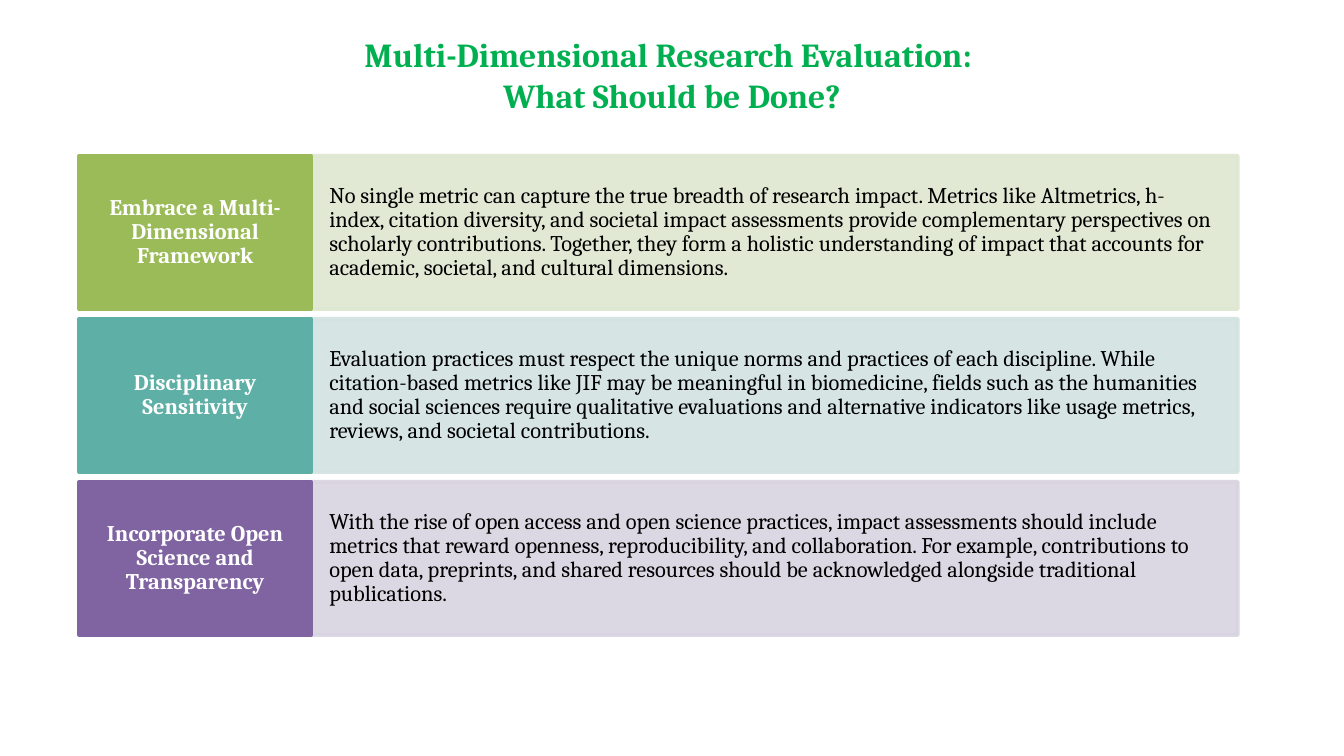
import pptx
import pptx.util
import pptx.dml.color
import pptx.enum.shapes
import pptx.enum.text
import pptx.oxml
import pptx.oxml.ns

EMU_PER_PX = 2286
FONT = "Cambria"
COLORS = {
    "title": "00B050",
    "label": "FFFFFF",
    "body": "000000",
    "green": "9BBB59",
    "green_tint": "DEE7D1",
    "teal": "5EAFA6",
    "teal_tint": "D2E3E2",
    "purple": "8064A2",
    "purple_tint": "D8D3E0",
}
LEFT, TOP = 236, 464
LABEL_WIDTH, BODY_WIDTH = 690, 2758
ROW_HEIGHT, ROW_STEP = 456, 485

ROWS = [
    ("green", "Embrace a Multi-Dimensional Framework",
     "No single metric can capture the true breadth of research impact. "
     "Metrics like Altmetrics, h-index, citation diversity, and societal impact "
     "assessments provide complementary perspectives on scholarly contributions. "
     "Together, they form a holistic understanding of impact that accounts for "
     "academic, societal, and cultural dimensions."),
    ("teal", "Disciplinary Sensitivity",
     "Evaluation practices must respect the unique norms and practices of each "
     "discipline. While citation-based metrics like JIF may be meaningful in "
     "biomedicine, fields such as the humanities and social sciences require "
     "qualitative evaluations and alternative indicators like usage metrics, "
     "reviews, and societal contributions."),
    ("purple", "Incorporate Open Science and Transparency",
     "With the rise of open access and open science practices, impact assessments "
     "should include metrics that reward openness, reproducibility, and "
     "collaboration. For example, contributions to open data, preprints, and "
     "shared resources should be acknowledged alongside traditional publications."),
]


def px(n):
    return pptx.util.Emu(n * EMU_PER_PX)


def rgb(name):
    return pptx.dml.color.RGBColor.from_string(COLORS[name])


def write_text(tf, text, size, color, bold, align):
    tf.text = text
    tf.word_wrap = True
    tf.auto_size = pptx.enum.text.MSO_AUTO_SIZE.NONE
    tf.vertical_anchor = pptx.enum.text.MSO_ANCHOR.MIDDLE
    p = tf.paragraphs[0]
    p.alignment = align
    for r in p.runs:
        r.font.name = FONT
        r.font.size = pptx.util.Pt(size)
        r.font.bold = bold
        r.font.color.rgb = rgb(color)


def set_alpha(sp, percent):
    for clr in sp._element.spPr.iter(pptx.oxml.ns.qn("a:srgbClr")):
        alpha = pptx.oxml.parse_xml(
            f'<a:alpha {pptx.oxml.ns.nsdecls("a")} val="{percent * 1000}"/>')
        clr.append(alpha)


def add_title(s, text):
    sp = s.shapes.title
    sp.left, sp.top, sp.width, sp.height = px(276), px(36), px(3448), px(372)
    write_text(sp.text_frame, text, 18, "title", True,
               pptx.enum.text.PP_ALIGN.CENTER)


def add_panel(s, left, top, width, fill, text, color, bold, align, insets):
    sp = s.shapes.add_shape(pptx.enum.shapes.MSO_SHAPE.RECTANGLE,
                            px(left), px(top), px(width), px(ROW_HEIGHT))
    sp.shadow.inherit = False
    sp.fill.solid()
    sp.fill.fore_color.rgb = rgb(fill)
    sp.line.color.rgb = rgb(fill)
    sp.line.width = pptx.util.Pt(2)
    tf = sp.text_frame
    write_text(tf, text, 12, color, bold, align)
    tf.paragraphs[0].line_spacing = 0.9
    left_inset, right_inset, end_inset = insets
    tf.margin_left, tf.margin_right = px(left_inset), px(right_inset)
    tf.margin_top = tf.margin_bottom = px(end_inset)
    return sp


def add_row(s, top, hue, label, body):
    sp = add_panel(s, LEFT + LABEL_WIDTH, top, BODY_WIDTH, f"{hue}_tint", body,
                   "body", False, pptx.enum.text.PP_ALIGN.LEFT, (54, 64, 116))
    set_alpha(sp, 90)
    add_panel(s, LEFT, top, LABEL_WIDTH, hue, label,
              "label", True, pptx.enum.text.PP_ALIGN.CENTER, (36, 36, 44))


def main():
    prs = pptx.Presentation()
    prs.slide_width, prs.slide_height = px(4000), px(2250)
    s = prs.slides.add_slide(prs.slide_layouts[5])
    add_title(s, "Multi-Dimensional Research Evaluation: \vWhat Should be Done?")
    for i, (hue, label, body) in enumerate(ROWS):
        add_row(s, TOP + i * ROW_STEP, hue, label, body)
    prs.save("out.pptx")


if __name__ == "__main__":
    main()
